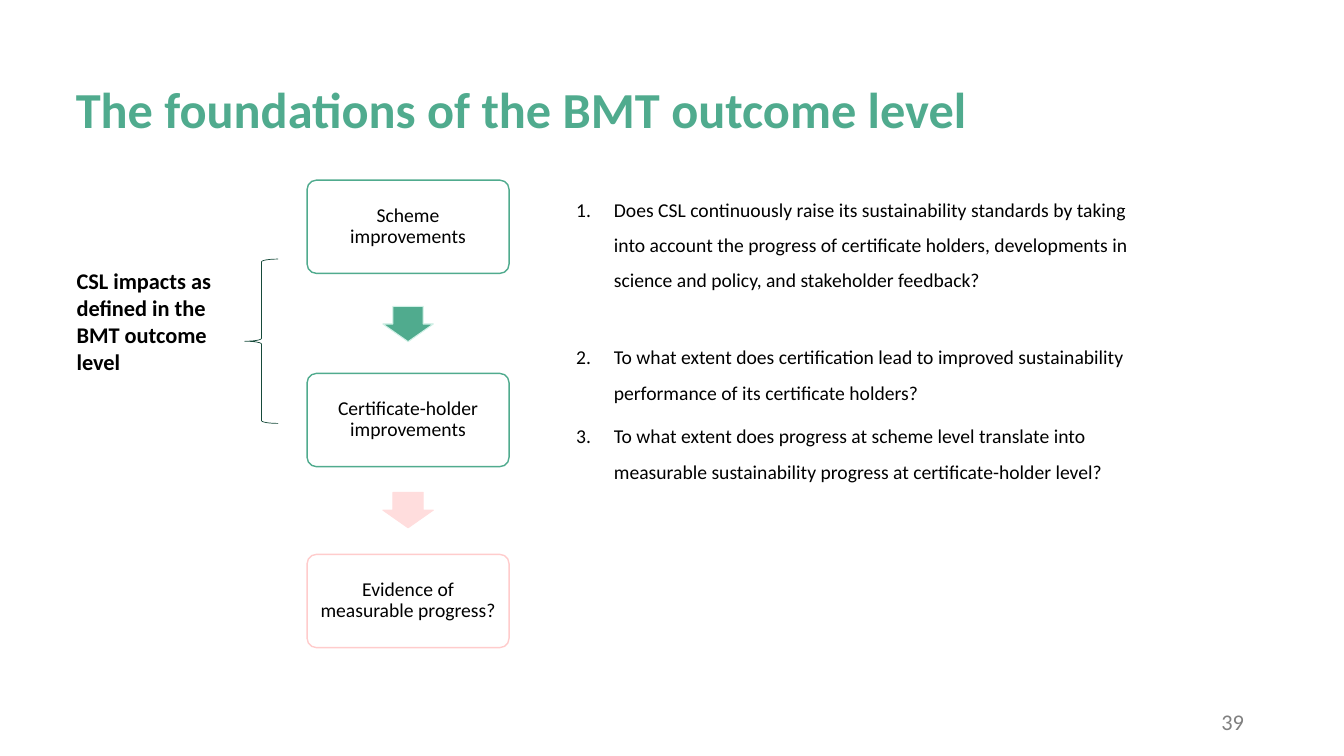
from dataclasses import dataclass

from lxml import etree
from pptx import Presentation
from pptx.dml.color import RGBColor
from pptx.enum.shapes import MSO_SHAPE
from pptx.enum.text import MSO_ANCHOR, MSO_AUTO_SIZE, PP_ALIGN
from pptx.oxml.ns import qn
from pptx.util import Cm, Pt

ROUNDED, DOWN_ARROW, LEFT_BRACE = (
    MSO_SHAPE.ROUNDED_RECTANGLE, MSO_SHAPE.DOWN_ARROW, MSO_SHAPE.LEFT_BRACE)
LEFT, CENTER, RIGHT = PP_ALIGN.LEFT, PP_ALIGN.CENTER, PP_ALIGN.RIGHT
TOP, MIDDLE = MSO_ANCHOR.TOP, MSO_ANCHOR.MIDDLE
NO_AUTOFIT = MSO_AUTO_SIZE.NONE


@dataclass(frozen=True)
class Theme:
    font: str = "Calibri"
    green: str = "50AB8E"
    pale_green: str = "D0F0E6"
    dark_green: str = "164A3A"
    pink: str = "FFCCCC"
    pale_pink: str = "FFDDDD"
    white: str = "FFFFFF"
    black: str = "000000"
    grey: str = "808080"
    title_size: int = 36
    label_size: int = 16
    body_size: int = 14


@dataclass(frozen=True)
class Box:
    """Left, top, width and height in centimetres."""
    left: float
    top: float
    width: float
    height: float

    def lengths(self):
        return Cm(self.left), Cm(self.top), Cm(self.width), Cm(self.height)


@dataclass(frozen=True)
class Stage:
    text: str
    top: float
    outline: str


@dataclass(frozen=True)
class StageArrow:
    top: float
    fill: str
    outline: str


@dataclass(frozen=True)
class Question:
    text: str
    space_before: int


THEME = Theme()
STAGE_LEFT, STAGE_WIDTH, STAGE_HEIGHT = 7.74, 5.09, 2.35
ARROW_WIDTH, ARROW_HEIGHT = 1.27, 0.89
NUMBER_INDENT = Cm(0.95)

STAGES = [
    Stage("Scheme improvements", 4.54, THEME.green),
    Stage("Certificate-holder improvements", 9.41, THEME.green),
    Stage("Evidence of measurable progress?", 13.97, THEME.pink),
]
STAGE_ARROWS = [
    StageArrow(7.72, THEME.green, THEME.pale_green),
    StageArrow(12.41, THEME.pale_pink, THEME.pale_pink),
]
QUESTIONS = [
    Question("Does CSL continuously raise its sustainability standards by "
             "taking into account the progress of certificate holders, "
             "developments in science and policy, and stakeholder feedback?", 0),
    Question("To what extent does certification lead to improved "
             "sustainability performance of its certificate holders?", 30),
    Question("To what extent does progress at scheme level translate into "
             "measurable sustainability progress at certificate-holder level?", 6),
]


def place(shape, box: Box) -> None:
    shape.left, shape.top, shape.width, shape.height = box.lengths()


def set_frame(frame, inset: float, anchor=TOP) -> None:
    frame.word_wrap = True
    frame.auto_size = NO_AUTOFIT
    frame.vertical_anchor = anchor
    frame.margin_left = frame.margin_right = Cm(inset)
    frame.margin_top = frame.margin_bottom = Cm(inset)


def style(paragraph, size: int, color: str = THEME.black,
          bold: bool = False, align=LEFT) -> None:
    paragraph.alignment = align
    font = paragraph.font
    font.name, font.size, font.bold = THEME.font, Pt(size), bold
    font.color.rgb = RGBColor.from_string(color)


def number(paragraph) -> None:
    """Give the paragraph a hanging automatic number."""
    properties = paragraph._p.get_or_add_pPr()
    properties.set("marL", str(NUMBER_INDENT))
    properties.set("indent", str(-NUMBER_INDENT))
    etree.SubElement(properties, qn("a:buFont"), typeface="+mj-lt")
    etree.SubElement(properties, qn("a:buAutoNum"), type="arabicPeriod")


def add_outlined(slide, kind, box: Box, outline: str, width: float,
                 fill: str | None = None):
    shape = slide.shapes.add_shape(kind, *box.lengths())
    shape.shadow.inherit = False
    if fill is None:
        shape.fill.background()
    else:
        shape.fill.solid()
        shape.fill.fore_color.rgb = RGBColor.from_string(fill)
    shape.line.color.rgb = RGBColor.from_string(outline)
    shape.line.width = Pt(width)
    return shape


def add_stage(slide, stage: Stage) -> None:
    box = Box(STAGE_LEFT, stage.top, STAGE_WIDTH, STAGE_HEIGHT)
    shape = add_outlined(slide, ROUNDED, box, stage.outline, 1, THEME.white)
    shape.adjustments[0] = 0.1
    set_frame(shape.text_frame, 0.2, MIDDLE)
    shape.text_frame.text = stage.text
    paragraph = shape.text_frame.paragraphs[0]
    paragraph.line_spacing = 0.9
    style(paragraph, THEME.body_size, align=CENTER)


def add_stage_arrow(slide, arrow: StageArrow) -> None:
    left = STAGE_LEFT + (STAGE_WIDTH - ARROW_WIDTH) / 2
    box = Box(left, arrow.top, ARROW_WIDTH, ARROW_HEIGHT)
    shape = add_outlined(slide, DOWN_ARROW, box, arrow.outline, 0.75, arrow.fill)
    shape.adjustments[0] = 0.6
    shape.adjustments[1] = 0.5


def add_label(slide, text: str, box: Box, inset: float, color: str,
              bold: bool, align) -> None:
    frame = slide.shapes.add_textbox(*box.lengths()).text_frame
    set_frame(frame, inset)
    frame.text = text
    style(frame.paragraphs[0], THEME.label_size, color, bold, align)


def fill_title(title) -> None:
    place(title, Box(1.91, 1.96, 27.41, 1.55))
    set_frame(title.text_frame, 0)
    title.text_frame.text = "The foundations of the BMT outcome level"
    style(title.text_frame.paragraphs[0], THEME.title_size, THEME.green, True)


def fill_questions(body) -> None:
    place(body, Box(14.27, 4.55, 14.73, 8.1))
    frame = body.text_frame
    set_frame(frame, 0.25)
    frame.margin_top = frame.margin_bottom = Cm(0.13)
    frame.text = "\n".join(question.text for question in QUESTIONS)
    for paragraph, question in zip(frame.paragraphs, QUESTIONS):
        number(paragraph)
        paragraph.line_spacing = 1.5
        paragraph.space_before = Pt(question.space_before)
        style(paragraph, THEME.body_size)


def main() -> None:
    deck = Presentation()
    deck.slide_width, deck.slide_height = Cm(33.87), Cm(19.05)
    slide = deck.slides.add_slide(deck.slide_layouts.get_by_name("Title and Content"))
    fill_title(slide.shapes.title)
    fill_questions(slide.placeholders[1])
    for stage in STAGES:
        add_stage(slide, stage)
    for arrow in STAGE_ARROWS:
        add_stage_arrow(slide, arrow)
    add_label(slide, "CSL impacts as defined in the BMT outcome level",
              Box(1.93, 6.73, 3.76, 2.74), 0, THEME.black, True, LEFT)
    add_outlined(slide, LEFT_BRACE, Box(6.17, 6.53, 0.84, 4.14),
                 THEME.dark_green, 0.5)
    add_label(slide, "39", Box(23.93, 17.65, 7.62, 1.02), 0.2,
              THEME.grey, False, RIGHT)
    deck.save("out.pptx")


if __name__ == "__main__":
    main()
